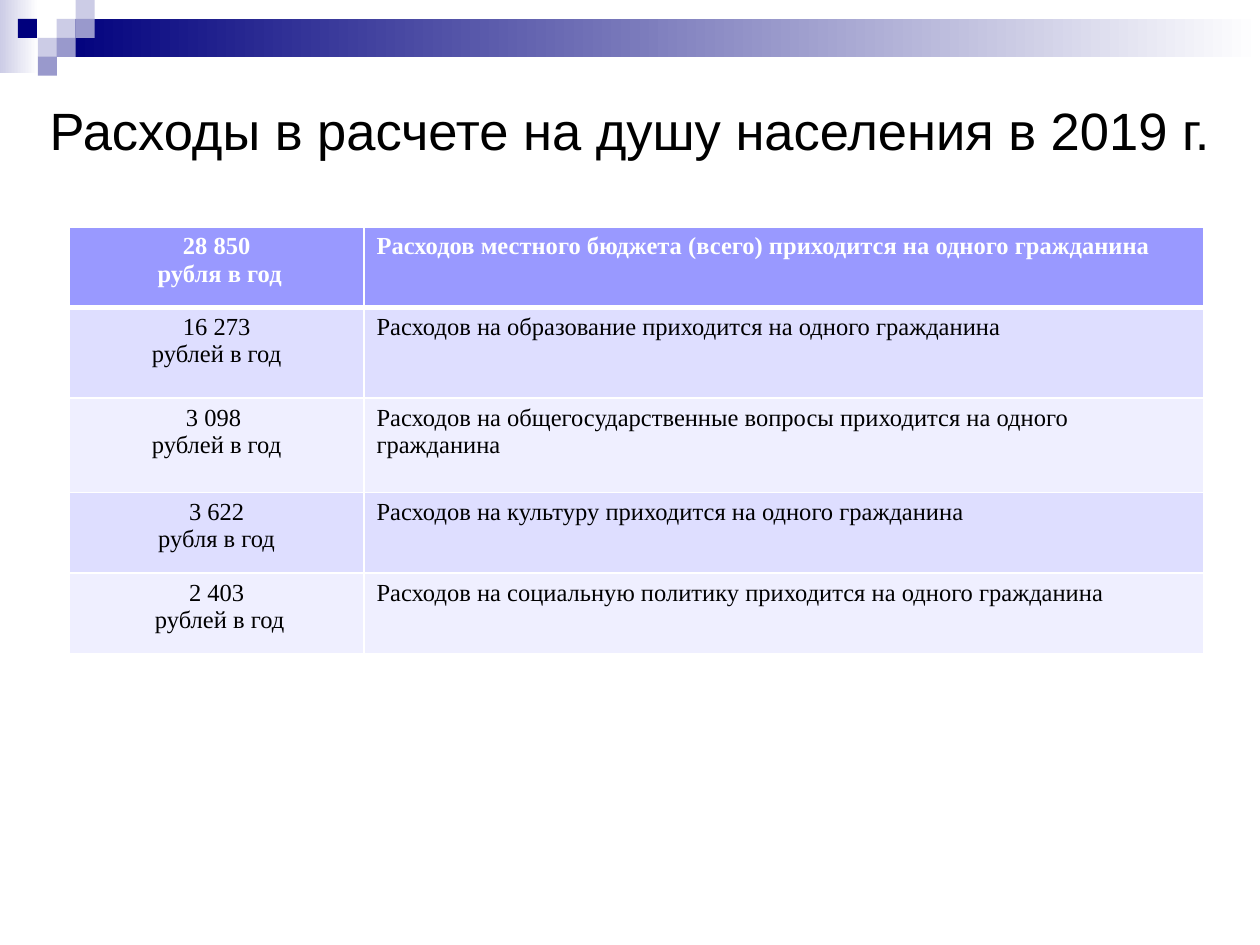
import pptx
import pptx.dml.color
import pptx.enum.shapes
import pptx.enum.text
import pptx.oxml
import pptx.oxml.ns
import pptx.util

Pt = pptx.util.Pt
ALIGN = pptx.enum.text.PP_ALIGN
ANCHOR = pptx.enum.text.MSO_ANCHOR
NAVY, LILAC, VIOLET, WHITE, BLACK = "00007D", "CCCCE6", "9999CC", "FFFFFF", "000000"
HEADER_FILL, BAND_FILLS = "9999FF", ("DEDEFF", "EFEFFF")

SQUARE = 10.9
SQUARES = [
    (32.4, 10.8, LILAC), (43.2, 0, LILAC), (43.2, 10.8, VIOLET), (21.6, 21.6, LILAC),
    (10.2, 10.8, NAVY), (32.4, 21.6, VIOLET), (21.6, 32.4, VIOLET),
]
ROW_HEIGHTS = [46, 52, 54, 46, 46]
COLUMN_WIDTHS = [168.4, 479.6]
EXPENSES = [
    ("28 850\n рубля в год", "Расходов местного бюджета (всего) приходится на одного гражданина"),
    ("16 273\nрублей в год", "Расходов на образование приходится на одного гражданина"),
    ("3 098 \nрублей в год", "Расходов на общегосударственные вопросы приходится на одного гражданина"),
    ("3 622\nрубля в год", "Расходов на культуру приходится на одного гражданина"),
    ("2 403\n рублей в год", "Расходов на социальную политику приходится на одного гражданина"),
]


def color(value):
    return pptx.dml.color.RGBColor.from_string(value)


def apply_format(target, values):
    for name, value in values.items():
        setattr(target, name, value)


class SlideBuilder:
    title_font = {"name": "Arial", "size": Pt(30), "bold": False}
    table_font = {"name": "Times New Roman", "size": Pt(14)}

    def __init__(self, slide):
        self.slide = slide

    def rectangle(self, left, top, width, height, fill, gradient_end=None):
        shape = self.slide.shapes.add_shape(
            pptx.enum.shapes.MSO_SHAPE.RECTANGLE, Pt(left), Pt(top), Pt(width), Pt(height))
        shape.shadow.inherit = False
        shape.line.fill.background()
        if gradient_end:
            shape.fill.gradient()
            shape.fill.gradient_angle = 0
            for stop, value in zip(shape.fill.gradient_stops, (fill, gradient_end)):
                stop.color.rgb = color(value)
        else:
            shape.fill.solid()
            shape.fill.fore_color.rgb = color(fill)

    def text(self, frame, text, alignment, font, font_color):
        frame.text = text
        for paragraph in frame.paragraphs:
            paragraph.alignment = alignment
            for run in paragraph.runs:
                apply_format(run.font, font)
                run.font.color.rgb = color(font_color)

    def title(self, text, left, top, width, height):
        shape = self.slide.shapes.title
        apply_format(shape, {"left": Pt(left), "top": Pt(top), "width": Pt(width), "height": Pt(height)})
        apply_format(shape.text_frame, {
            "word_wrap": True, "vertical_anchor": ANCHOR.MIDDLE, "margin_bottom": Pt(24),
            "auto_size": pptx.enum.text.MSO_AUTO_SIZE.NONE})
        self.text(shape.text_frame, text, ALIGN.CENTER, self.title_font, BLACK)

    def borders(self, cell, widths):
        properties = cell._tc.get_or_add_tcPr()
        for index, (side, width) in enumerate(widths.items()):
            properties.insert(index, pptx.oxml.parse_xml(
                f'<a:{side} {pptx.oxml.ns.nsdecls("a")} w="{Pt(width)}">'
                f'<a:solidFill><a:srgbClr val="{WHITE}"/></a:solidFill></a:{side}>'))

    def table(self, rows, left, top, widths, heights):
        table = self.slide.shapes.add_table(
            len(rows), len(widths), Pt(left), Pt(top), Pt(sum(widths)), Pt(sum(heights))).table
        for column, width in zip(table.columns, widths):
            column.width = Pt(width)
        for row_index, (texts, height) in enumerate(zip(rows, heights)):
            table.rows[row_index].height = Pt(height)
            header = row_index == 0
            fill = HEADER_FILL if header else BAND_FILLS[(row_index - 1) % 2]
            widths_by_side = {"lnL": 1, "lnR": 1, "lnT": 3 if row_index == 1 else 1, "lnB": 3 if header else 1}
            for column_index, text in enumerate(texts):
                cell = table.cell(row_index, column_index)
                cell.fill.solid()
                cell.fill.fore_color.rgb = color(fill)
                self.borders(cell, widths_by_side)
                self.text(cell.text_frame, text, (ALIGN.CENTER, ALIGN.LEFT)[column_index],
                          {**self.table_font, "bold": header}, WHITE if header else BLACK)


def main():
    presentation = pptx.Presentation()
    apply_format(presentation, {"slide_width": Pt(720), "slide_height": Pt(540)})
    builder = SlideBuilder(presentation.slides.add_slide(presentation.slide_layouts[5]))
    builder.rectangle(0, 0, 22, 42, LILAC, WHITE)
    builder.rectangle(32.4, 10.8, 687.6, 21.6, NAVY, WHITE)
    for left, top, fill in SQUARES:
        builder.rectangle(left, top, SQUARE, SQUARE, fill)
    builder.title("Расходы в расчете на душу населения в 2019 г.", 0, 50.4, 720, 67.7)
    builder.table(EXPENSES, 39.6, 129.6, COLUMN_WIDTHS, ROW_HEIGHTS)
    presentation.save("out.pptx")


if __name__ == "__main__":
    main()
